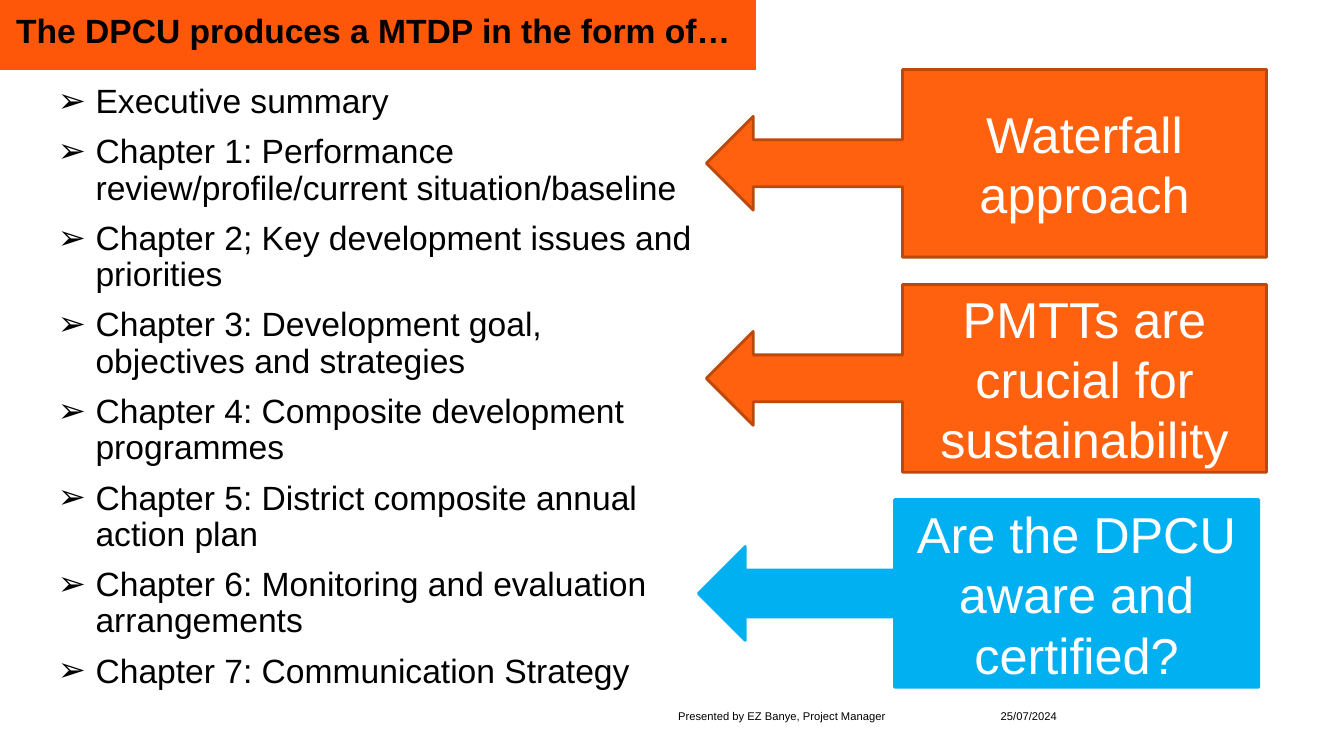
from lxml.etree import SubElement
from pptx import Presentation
from pptx.dml.color import RGBColor
from pptx.enum.shapes import MSO_SHAPE
from pptx.enum.text import MSO_ANCHOR, PP_ALIGN
from pptx.oxml.ns import qn
from pptx.util import Cm, Pt

TITLE = "The DPCU produces a MTDP in the form of…"
CHAPTERS = [
    "Executive summary",
    "Chapter 1: Performance review/profile/current situation/baseline",
    "Chapter 2; Key development issues and priorities",
    "Chapter 3: Development goal, objectives and strategies",
    "Chapter 4: Composite development programmes",
    "Chapter 5: District composite annual action plan",
    "Chapter 6: Monitoring and evaluation arrangements",
    "Chapter 7: Communication Strategy",
]
# text, left (cm), fill, line
CALLOUTS = [
    ("Waterfall approach", 17.8, "orange", "rust"),
    ("PMTTs are crucial for sustainability", 17.8, "orange", "rust"),
    ("Are the DPCU aware and certified?", 17.6, "blue", "blue"),
]
# text, left (cm), width (cm)
FOOTER = [
    ("Presented by EZ Banye, Project Manager", 17.09, 7.77),
    ("25/07/2024", 25.22, 5.05),
]
THEME = {
    "font": "Arial",
    "size": {"title": 24, "body": 24, "callout": 36, "footer": 8},
    "color": {
        name: RGBColor.from_string(code)
        for name, code in {
            "black": "000000", "white": "FFFFFF", "banner": "FF5709",
            "orange": "FF610F", "rust": "BD480B", "blue": "00B0F0",
        }.items()
    },
}
CALLOUT_TOP, CALLOUT_STEP = 1.75, 5.42


def style(paragraph, role, color="black", bold=False):
    font = paragraph.font
    font.name = THEME["font"]
    font.size = Pt(THEME["size"][role])
    font.color.rgb = THEME["color"][color]
    font.bold = bold


def add_arrow_bullet(paragraph):
    properties = paragraph._p.get_or_add_pPr()
    properties.set("marL", str(Cm(1.59)))
    properties.set("indent", str(Cm(-0.95)))
    SubElement(properties, qn("a:buFont"), typeface=THEME["font"])
    SubElement(properties, qn("a:buChar"), char="➢")


def add_frame(slide, left, top, width, height, anchor):
    """Add a wrapping text box without insets and return its text frame."""
    frame = slide.shapes.add_textbox(
        Cm(left), Cm(top), Cm(width), Cm(height)).text_frame
    frame.word_wrap = True
    frame.vertical_anchor = anchor
    frame.margin_left = frame.margin_right = 0
    frame.margin_top = frame.margin_bottom = 0
    return frame


def add_block(slide, preset, left, top, width, height, fill, text, role, color):
    """Add a filled shape with centred text."""
    block = slide.shapes.add_shape(
        preset, Cm(left), Cm(top), Cm(width), Cm(height))
    block.shadow.inherit = False
    block.fill.solid()
    block.fill.fore_color.rgb = THEME["color"][fill]
    frame = block.text_frame
    frame.word_wrap = True
    frame.vertical_anchor = MSO_ANCHOR.MIDDLE
    paragraph = frame.paragraphs[0]
    paragraph.text = text
    paragraph.alignment = PP_ALIGN.CENTER
    style(paragraph, role, color, bold=role == "title")
    return block


def add_banner(slide):
    banner = add_block(slide, MSO_SHAPE.RECTANGLE, 0, 0, 19.05, 1.76,
                       "banner", TITLE, "title", "black")
    banner.line.fill.background()
    frame = banner.text_frame
    frame.margin_left = frame.margin_top = 0
    frame.margin_right, frame.margin_bottom = Cm(0.23), Cm(0.1)
    frame.paragraphs[0].line_spacing = 0.9


def add_chapters(slide):
    frame = add_frame(slide, 0.82, 2.13, 16.74, 15.54, MSO_ANCHOR.TOP)
    for index, chapter in enumerate(CHAPTERS):
        paragraph = frame.add_paragraph() if index else frame.paragraphs[0]
        paragraph.text = chapter
        add_arrow_bullet(paragraph)
        paragraph.line_spacing = 0.9
        paragraph.space_before = Pt(10 if index else 0)
        style(paragraph, "body")


def main():
    deck = Presentation()
    deck.slide_width, deck.slide_height = Cm(33.87), Cm(19.05)
    slide = deck.slides.add_slide(deck.slide_layouts[6])

    add_banner(slide)
    add_chapters(slide)
    for text, left, width in FOOTER:
        frame = add_frame(slide, left, 17.65, width, 0.56, MSO_ANCHOR.BOTTOM)
        frame.paragraphs[0].text = text
        style(frame.paragraphs[0], "footer")
    for index, (text, left, fill, line) in enumerate(CALLOUTS):
        callout = add_block(
            slide, MSO_SHAPE.LEFT_ARROW_CALLOUT, left,
            CALLOUT_TOP + index * CALLOUT_STEP, 14.12, 4.73,
            fill, text, "callout", "white")
        callout.line.color.rgb = THEME["color"][line]
        callout.line.width = Pt(2)

    deck.save("out.pptx")


if __name__ == "__main__":
    main()
